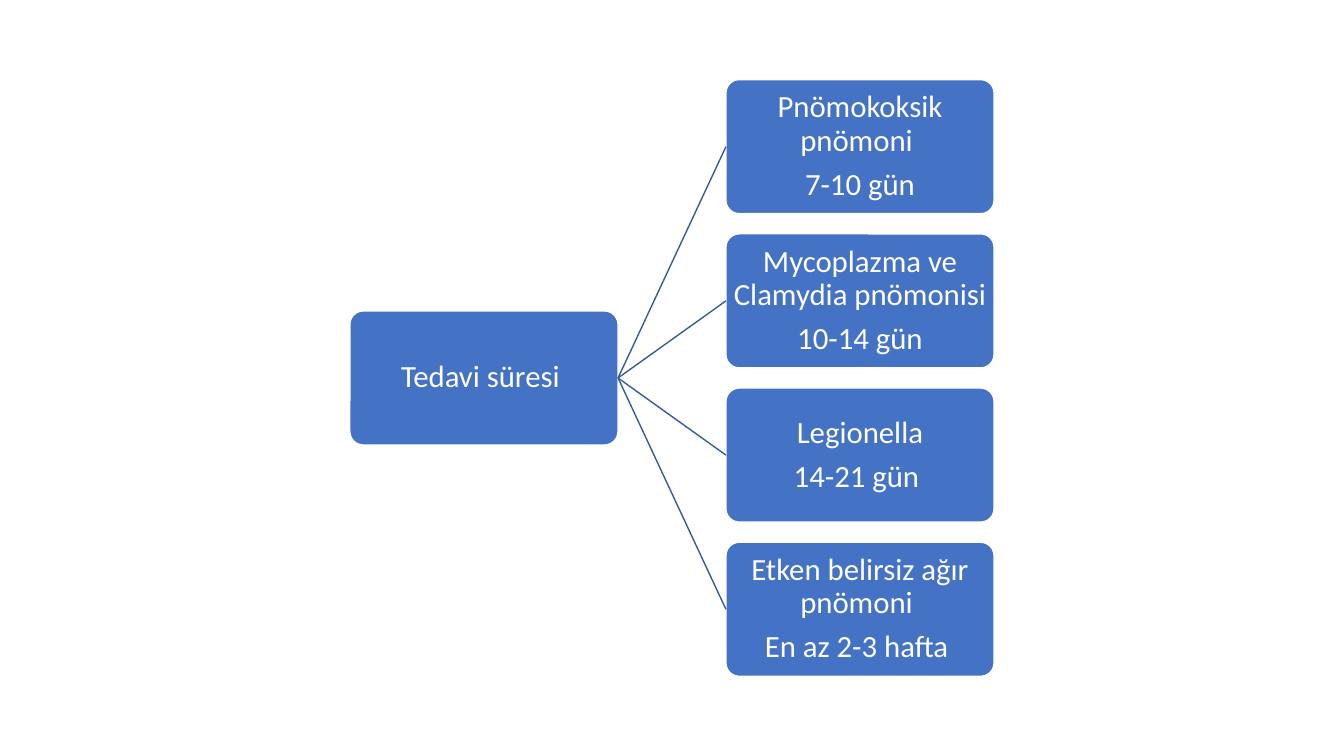
import pptx
import pptx.util
import pptx.dml.color
import pptx.enum.shapes
import pptx.enum.text
import pptx.oxml.ns
import lxml.etree
from pptx.util import Inches

BOX_W, BOX_H = 2.66, 1.33
ROOT_LEFT, LEAF_LEFT = 3.47, 7.2
FIRST_TOP, STEP = 0.79, 1.53
MIDDLE = 3.75
RIGHT_SITE, LEFT_SITE = 3, 1

DURATIONS = [
    ("Pnömokoksik pnömoni ", "7-10 gün"),
    ("Mycoplazma ve Clamydia pnömonisi", "10-14 gün"),
    ("Legionella", "14-21 gün "),
    ("Etken belirsiz ağır pnömoni ", "En az 2-3 hafta "),
]


def color(hex_value):
    return pptx.dml.color.RGBColor.from_string(hex_value)


def write_text(tf, lines, size=22, font="Calibri", fill="FFFFFF", inset=0.02):
    tf.word_wrap = True
    tf.vertical_anchor = pptx.enum.text.MSO_ANCHOR.MIDDLE
    tf.margin_left = tf.margin_right = Inches(inset)
    tf.margin_top = tf.margin_bottom = Inches(inset)
    for i, line in enumerate(lines):
        p = tf.paragraphs[0] if i == 0 else tf.add_paragraph()
        p.alignment = pptx.enum.text.PP_ALIGN.CENTER
        p.line_spacing = 0.9
        p.space_after = pptx.util.Pt(0.35 * size)
        r = p.add_run()
        r.text = line
        r.font.size = pptx.util.Pt(size)
        r.font.name = font
        r.font.color.rgb = color(fill)


def add_box(s, left, top, lines):
    sp = s.shapes.add_shape(
        pptx.enum.shapes.MSO_SHAPE.ROUNDED_RECTANGLE,
        Inches(left), Inches(top), Inches(BOX_W), Inches(BOX_H))
    sp.adjustments[0] = 0.1
    sp.shadow.inherit = False
    sp.fill.solid()
    sp.fill.fore_color.rgb = color("4472C4")
    sp.line.color.rgb = color("FFFFFF")
    sp.line.width = pptx.util.Pt(1)
    write_text(sp.text_frame, lines)
    return sp


def add_branch(s, root, leaf):
    line = s.shapes.add_connector(
        pptx.enum.shapes.MSO_CONNECTOR.STRAIGHT, 0, 0, 0, 0)
    line.begin_connect(root, RIGHT_SITE)
    line.end_connect(leaf, LEFT_SITE)
    line.line.color.rgb = color("365B9D")
    line.line.width = pptx.util.Pt(1)
    lxml.etree.SubElement(line._element.spPr, pptx.oxml.ns.qn("a:effectLst"))


def main():
    prs = pptx.Presentation()
    prs.slide_width, prs.slide_height = Inches(13.33), Inches(7.5)
    s = prs.slides.add_slide(prs.slide_layouts[6])

    # Root of the tree
    root = add_box(s, ROOT_LEFT, MIDDLE - BOX_H / 2, ["Tedavi süresi "])

    # One branch per diagnosis
    for i, lines in enumerate(DURATIONS):
        leaf = add_box(s, LEAF_LEFT, FIRST_TOP + i * STEP, lines)
        add_branch(s, root, leaf)

    prs.save("out.pptx")


if __name__ == "__main__":
    main()
